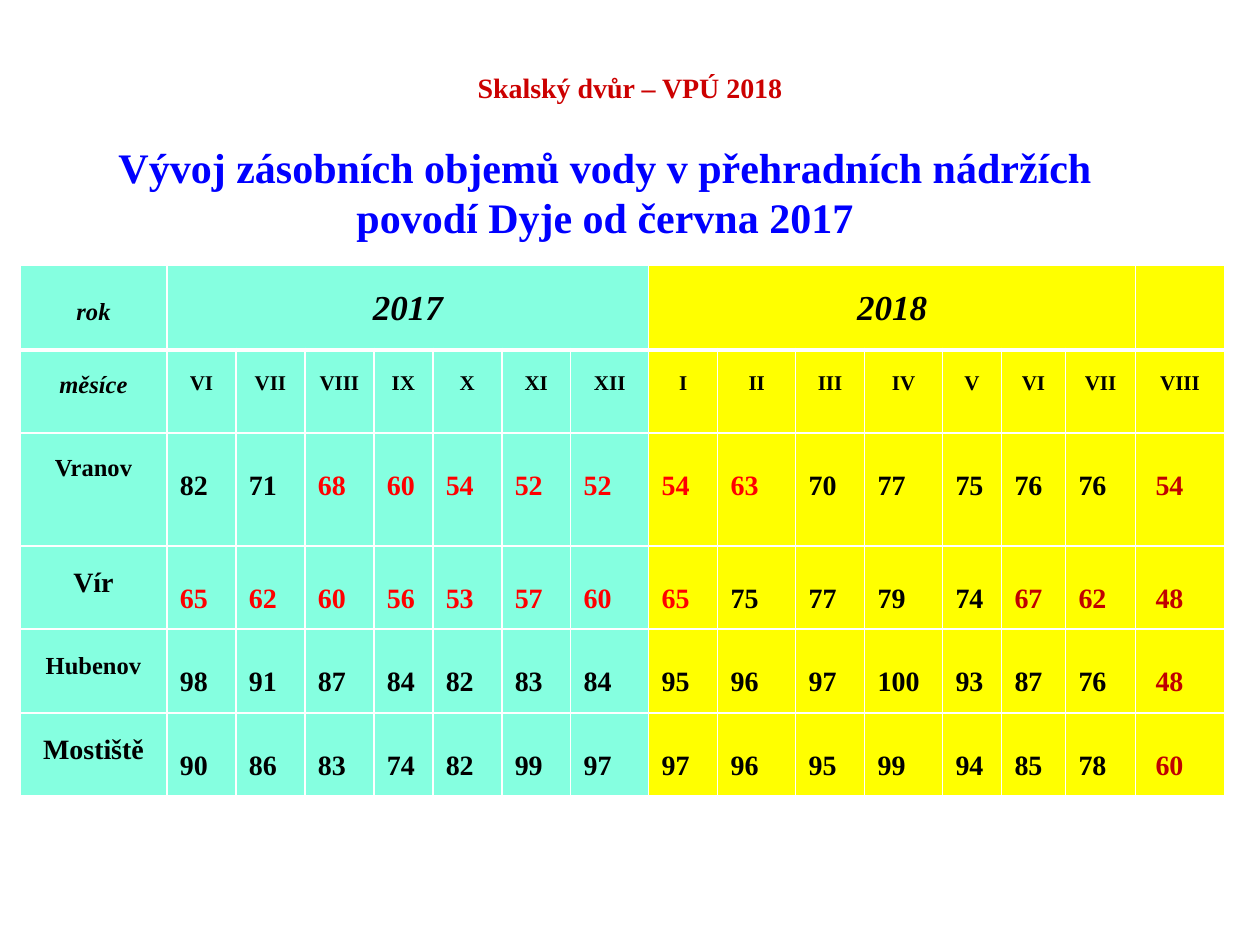
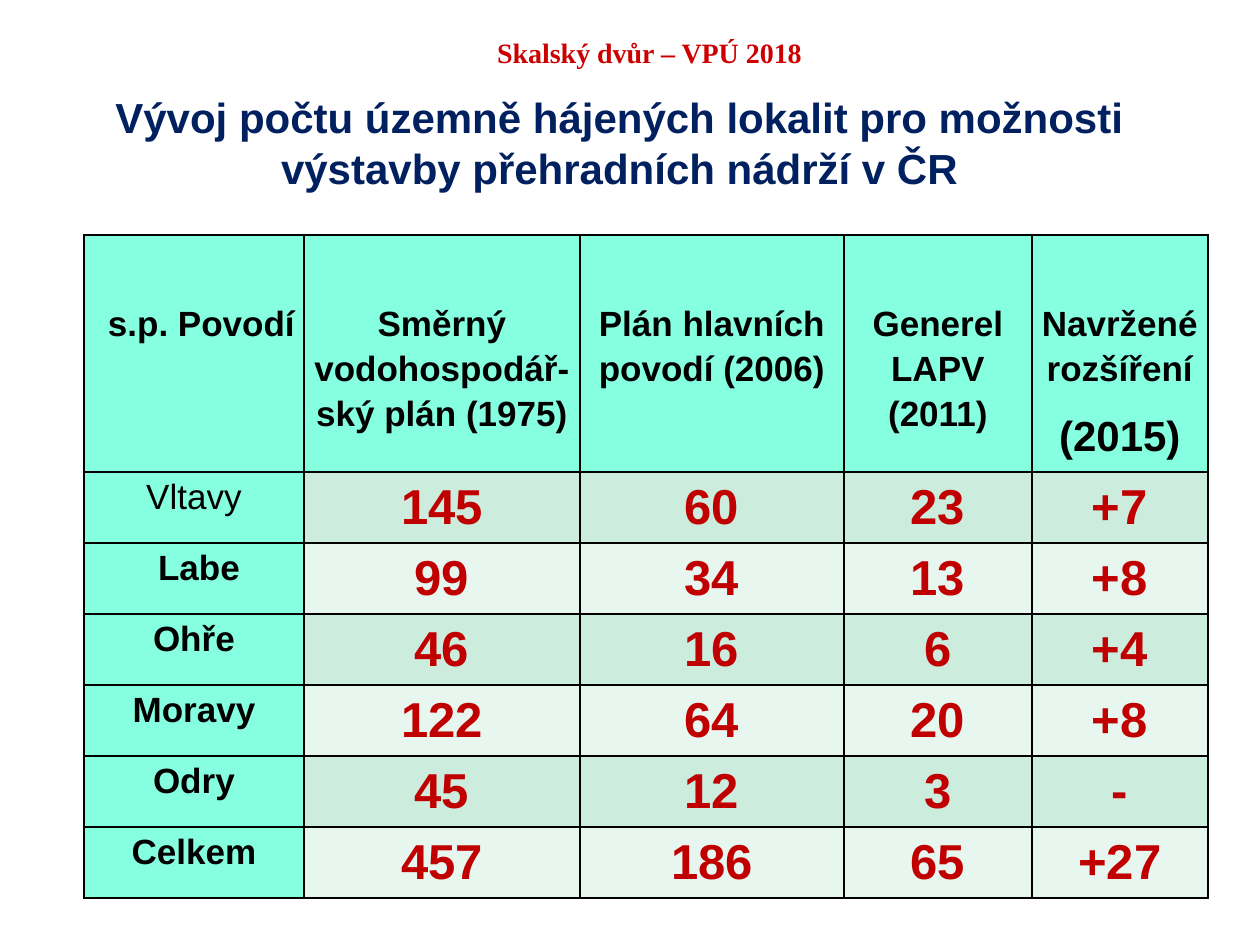
from pptx import Presentation
from pptx.dml.color import RGBColor
from pptx.enum.text import MSO_ANCHOR, MSO_AUTO_SIZE, PP_ALIGN
from pptx.oxml import parse_xml
from pptx.oxml.ns import nsdecls
from pptx.util import Inches, Pt

SCALE = Inches(1) / 126
SERIF, SANS = "Times New Roman", "Arial"
BLACK = RGBColor(0x00, 0x00, 0x00)
WHITE = RGBColor(0xFF, 0xFF, 0xFF)
CRIMSON = RGBColor(0xCC, 0x00, 0x00)
RED = RGBColor(0xFF, 0x00, 0x00)
DARK = RGBColor(0xC0, 0x00, 0x00)
BLUE = RGBColor(0x00, 0x00, 0xFF)
NAVY = RGBColor(0x00, 0x20, 0x60)
AQUA = RGBColor(0x85, 0xFF, 0xE0)
YELLOW = RGBColor(0xFF, 0xFF, 0x00)
MINT = RGBColor(0xCC, 0xEC, 0xDE)
PALE = RGBColor(0xE7, 0xF6, 0xEF)
EVENT = "Skalský dvůr – VPÚ 2018"

MONTHS = "VI VII VIII IX X XI XII I II III IV V VI VII VIII".split()
WIDTHS = [147, 69, 69, 69, 59, 69, 69, 78, 69, 78, 69, 78, 59, 64, 70, 89]
DAMS = [
    ("Vranov", 14, 22, [82, 71, 68, 60, 54, 52, 52, 54, 63, 70, 77, 75, 76, 76, 54]),
    ("Vír", 16, 22, [65, 62, 60, 56, 53, 57, 60, 65, 75, 77, 79, 74, 67, 62, 48]),
    ("Hubenov", 14, 24, [98, 91, 87, 84, 82, 83, 84, 95, 96, 97, 100, 93, 87, 76, 48]),
    ("Mostiště", 16, 22, [90, 86, 83, 74, 82, 99, 97, 97, 96, 95, 99, 94, 85, 78, 60]),
]
LOW = 70  # volumes under this are shown in red

PLANS = ["s.p. Povodí", "Směrný vodohospodář-\vský plán (1975)",
         "Plán hlavních povodí (2006)", "Generel LAPV (2011)",
         "Navržené rozšíření\n(2015)"]
BASINS = [
    ("Vltavy", "145", "60", "23", "+7"),
    ("Labe", "99", "34", "13", "+8"),
    ("Ohře", "46", "16", "6", "+4"),
    ("Moravy", "122", "64", "20", "+8"),
    ("Odry", "45", "12", "3", "-"),
    ("Celkem", "457", "186", "65", "+27"),
]


def px(num):
    return int(num * SCALE)


class Deck:
    def __init__(self):
        self.prs = Presentation()
        self.prs.slide_width, self.prs.slide_height = px(1260), px(945)
        self.slide = None

    def start(self):
        self.slide = self.prs.slides.add_slide(self.prs.slide_layouts[5])

    def style(self, frame, text, size, color=BLACK, font=SERIF, bold=True,
              italic=False, align=PP_ALIGN.CENTER):
        """Put text in a frame and format its runs."""
        frame.word_wrap = True
        frame.text = text
        for para in frame.paragraphs:
            para.alignment = align
            for run in para.runs:
                face = run.font
                face.name, face.size = font, Pt(size)
                face.bold, face.italic = bold, italic
                face.color.rgb = color

    def title(self, box, text, size, color, font, top, anchor):
        shape = self.slide.shapes.title
        shape.left, shape.top, shape.width, shape.height = map(px, box)
        frame = shape.text_frame
        self.style(frame, text, size, color, font)
        frame.auto_size = MSO_AUTO_SIZE.NONE
        frame.vertical_anchor = anchor
        frame.margin_top = px(top)

    def label(self, box, text, size, color):
        shape = self.slide.shapes.add_textbox(*map(px, box))
        self.style(shape.text_frame, text, size, color)

    def table(self, left, top, cols, rows):
        box = map(px, (left, top, sum(cols), sum(rows)))
        grid = self.slide.shapes.add_table(len(rows), len(cols), *box).table
        grid.first_row = grid.horz_banding = False
        for col, wide in zip(grid.columns, cols):
            col.width = px(wide)
        for row, high in zip(grid.rows, rows):
            row.height = px(high)
        return grid

    def paint(self, cell, fill, line, under=1, above=1):
        """Fill a cell and rule its four sides, widths in points."""
        props = cell._tc.get_or_add_tcPr()
        for side, wide in zip("LRTB", (1, 1, above, under)):
            props.append(parse_xml(
                f'<a:ln{side} {nsdecls("a")} w="{Pt(wide)}"><a:solidFill>'
                f'<a:srgbClr val="{line}"/></a:solidFill></a:ln{side}>'))
        cell.fill.solid()
        cell.fill.fore_color.rgb = fill

    def cell(self, cell, text, size, margins, **look):
        """Set a cell's text; margins are left, top, right, bottom."""
        (cell.margin_left, cell.margin_top,
         cell.margin_right, cell.margin_bottom) = map(px, margins)
        self.style(cell.text_frame, text, size, **look)


def volumes(deck):
    deck.start()
    deck.title((63, 38, 1134, 87), EVENT, 16, CRIMSON, SERIF, 18,
               MSO_ANCHOR.MIDDLE)
    deck.label((94, 135, 1022, 152), "Vývoj zásobních objemů vody v přehradních "
               "nádržích povodí Dyje od června 2017", 24, BLUE)
    grid = deck.table(20, 265, WIDTHS, [85, 83, 113, 83, 84, 83])
    for row in range(6):
        for col in range(16):
            deck.paint(grid.cell(row, col), AQUA if col < 8 else YELLOW, WHITE,
                       3 if row == 0 else 1, 3 if row == 1 else 1)
    grid.cell(0, 1).merge(grid.cell(0, 7))
    grid.cell(0, 8).merge(grid.cell(0, 14))

    def head(row, col, text, size, top, italic=False):
        side = 6 if row == 1 and col else 13
        deck.cell(grid.cell(row, col), text, size, (side, top, side, 6),
                  italic=italic)

    head(0, 0, "rok", 14, 34, True)
    head(0, 1, "2017", 20, 24, True)
    head(0, 8, "2018", 20, 24, True)
    head(1, 0, "měsíce", 14, 22, True)
    for col, month in enumerate(MONTHS, 1):
        head(1, col, month, 12, 22)
    for row, (name, size, top, values) in enumerate(DAMS, 2):
        head(row, 0, name, size, top)
        for col, value in enumerate(values, 1):
            low = DARK if col > 12 else RED
            left = 20 if col == 15 else 13
            deck.cell(grid.cell(row, col), str(value), 16, (left, 38, 6, 6),
                      color=low if value < LOW else BLACK,
                      align=PP_ALIGN.LEFT)


def sites(deck):
    deck.start()
    deck.title((84, 66, 1071, 100), "Vývoj počtu územně hájených lokalit pro "
               "možnosti výstavby přehradních nádrží v ČR", 24, NAVY, SANS, 26,
               MSO_ANCHOR.TOP)
    grid = deck.table(84, 235, [220, 276, 264, 188, 176], [237] + [71] * 6)
    for row, texts in enumerate([PLANS] + BASINS):
        for col, text in enumerate(texts):
            cell = grid.cell(row, col)
            data = row > 0 and col > 0
            band = MINT if row % 2 else PALE
            deck.paint(cell, band if data else AQUA, BLACK)
            left = 19 if text == "Labe" else 9
            deck.cell(cell, text, 28 if data else 20,
                      (left, 0 if row else 64, 9, 0), font=SANS,
                      color=DARK if data else BLACK, bold=text != "Vltavy",
                      align=PP_ALIGN.CENTER if row or col else PP_ALIGN.RIGHT)
            for para in cell.text_frame.paragraphs:
                para.line_spacing = 1.15
                para.space_after = Pt(10)
    grid.cell(0, 4).text_frame.paragraphs[1].runs[0].font.size = Pt(24)
    deck.label((312, 29, 675, 81), EVENT, 16, CRIMSON)


def main():
    deck = Deck()
    volumes(deck)
    sites(deck)
    deck.prs.save("out.pptx")


if __name__ == "__main__":
    main()
